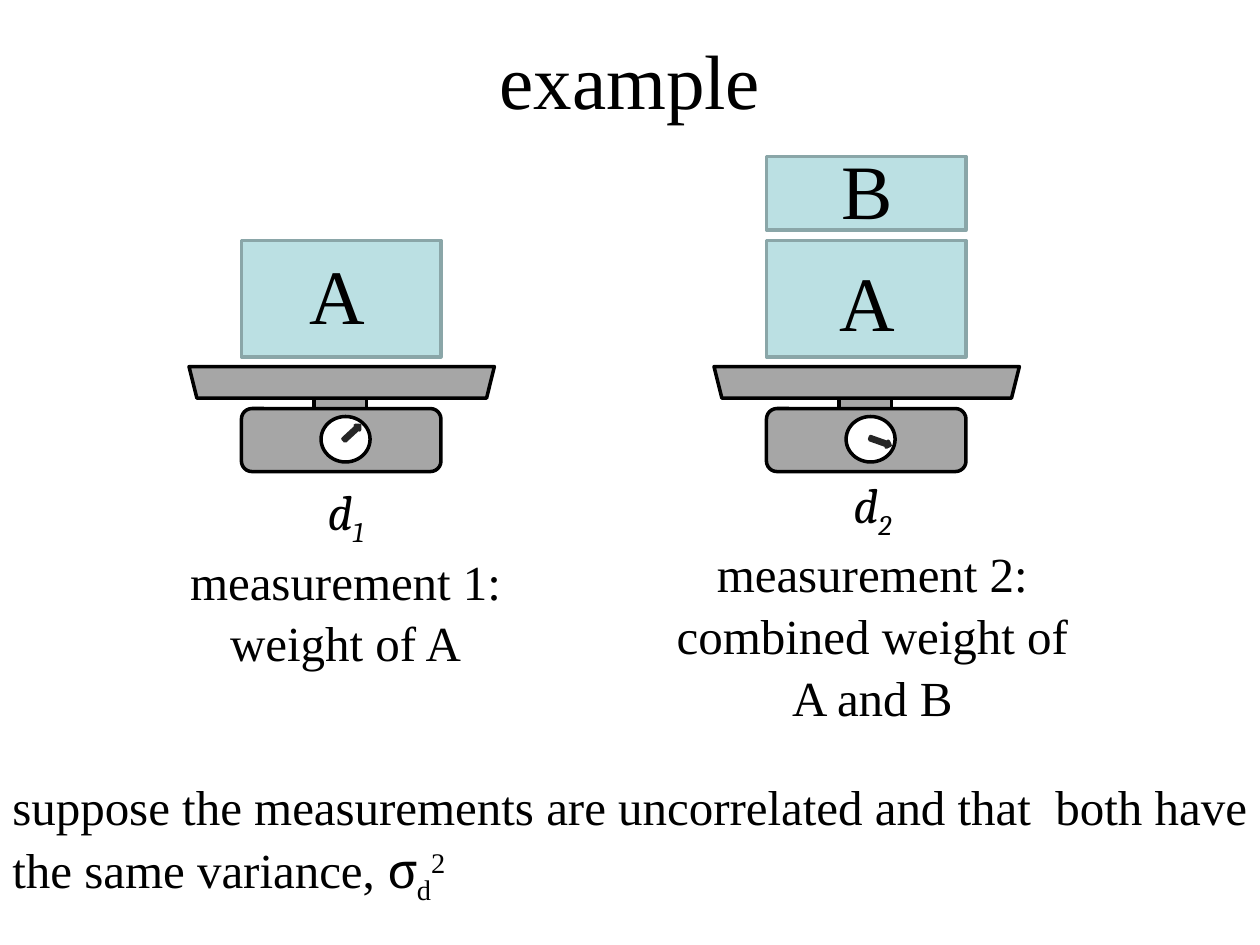
from typing import NamedTuple

from pptx import Presentation
from pptx.dml.color import RGBColor
from pptx.enum.shapes import MSO_SHAPE
from pptx.enum.text import MSO_ANCHOR, PP_ALIGN
from pptx.util import Pt

RECTANGLE = MSO_SHAPE.RECTANGLE
ROUNDED = MSO_SHAPE.ROUNDED_RECTANGLE
TRAPEZOID = MSO_SHAPE.TRAPEZOID
OVAL = MSO_SHAPE.OVAL
ARROW = MSO_SHAPE.RIGHT_ARROW
CENTER, LEFT = PP_ALIGN.CENTER, PP_ALIGN.LEFT
MIDDLE, TOP = MSO_ANCHOR.MIDDLE, MSO_ANCHOR.TOP

SERIF, MATH = "Times New Roman", "Cambria"
BLACK, WHITE, GRAY = "000000", "FFFFFF", "A6A6A6"
BLUE, BLUE_EDGE, NEEDLE = "BBE0E3", "8AA6A8", "262626"
LINE_SPACING = 1.05


class Area(NamedTuple):
    left: float
    top: float
    width: float
    height: float

    def shifted(self, distance: float) -> "Area":
        return self._replace(left=self.left + distance)

    def lengths(self) -> list:
        return [Pt(value) for value in self]


class Piece(NamedTuple):
    kind: int
    area: Area
    fill: str = GRAY
    line: str = BLACK
    rotation: float = 0


class Span(NamedTuple):
    text: str
    font: str = SERIF
    size: float = 28
    italic: bool = False
    baseline: int = 0


class Scale(NamedTuple):
    left: float
    pieces: list[Piece]


class Label(NamedTuple):
    area: Area
    paragraphs: list[list[Span]]
    align: int = CENTER
    anchor: int = MIDDLE
    spacing: float = LINE_SPACING


def color(value: str) -> RGBColor:
    return RGBColor.from_string(value)


def add_spans(para, spans: list[Span]) -> None:
    for span in spans:
        run = para.add_run()
        run.text = span.text
        run.font.name = span.font
        run.font.size = Pt(span.size)
        run.font.italic = span.italic
        run.font.color.rgb = color(BLACK)
        if span.baseline:
            run._r.get_or_add_rPr().set("baseline", str(span.baseline * 1000))


def draw_scale(page, scale: Scale) -> None:
    """Draw the pieces as one group; their positions count from the scale's left."""
    group = page.shapes.add_group_shape()
    for piece in scale.pieces:
        area = piece.area.shifted(scale.left)
        shape = group.shapes.add_shape(piece.kind, *area.lengths())
        shape.shadow.inherit = False
        shape.rotation = piece.rotation
        shape.fill.solid()
        shape.fill.fore_color.rgb = color(piece.fill)
        shape.line.color.rgb = color(piece.line)
        shape.line.width = Pt(2)


def draw_label(page, label: Label) -> None:
    box = page.shapes.add_textbox(*label.area.lengths())
    frame = box.text_frame
    frame.word_wrap = True
    frame.vertical_anchor = label.anchor
    for index, spans in enumerate(label.paragraphs):
        para = frame.add_paragraph() if index else frame.paragraphs[0]
        para.alignment = label.align
        para.line_spacing = label.spacing
        add_spans(para, spans)


def draw_title(page, text: str) -> None:
    title = page.shapes.title
    title.left, title.top, title.width, title.height = Area(0, 0, 720, 90).lengths()
    title.text_frame.vertical_anchor = MIDDLE
    para = title.text_frame.paragraphs[0]
    para.alignment = CENTER
    add_spans(para, [Span(text, size=44)])


def block(top: float, height: float) -> Piece:
    return Piece(RECTANGLE, Area(30, top, 114, height), BLUE, BLUE_EDGE)


def needle(left: float, top: float, rotation: float) -> Piece:
    return Piece(ARROW, Area(left, top, 12.2, 3.6), GRAY, NEEDLE, rotation)


def block_letter(letter: str, left: float, top: float) -> Label:
    return Label(Area(left, top, 60, 60.5), [[Span(letter, size=44)]], LEFT, TOP, 1)


def caption(area: Area, number: str, text: str) -> Label:
    symbol = [Span("d", MATH, italic=True),
              Span(number, MATH, italic=True, baseline=-25)]
    return Label(area, [symbol, [Span(text)]])


BALANCE = [
    Piece(RECTANGLE, Area(71.5, 221.5, 30, 18)),
    block(137.5, 66.5),
    Piece(ROUNDED, Area(30, 233.5, 114, 36)),
    Piece(TRAPEZOID, Area(0, 209.5, 174.5, 18), rotation=180),
    Piece(OVAL, Area(75.5, 238, 28, 26), WHITE),
]
SCALES = [
    Scale(108, [*BALANCE, needle(87, 245.5, 317.3)]),
    Scale(408, [block(89.5, 42), *BALANCE, needle(88.8, 250.6, 19.5)]),
]
LABELS = [
    caption(Area(68.5, 268.5, 258, 120), "1", "measurement 1: weight of A"),
    block_letter("A", 170, 138),
    block_letter("A", 472.5, 142),
    block_letter("B", 474, 78),
    caption(Area(369.5, 252, 258, 180), "2",
            "measurement 2: combined weight of A and B"),
    Label(Area(0, 420, 720, 120), [[
        Span("suppose the measurements are uncorrelated and that  both "
             "have the same variance, "),
        Span("σ", MATH),
        Span("d", baseline=-25),
        Span("2", baseline=30),
    ]], LEFT),
]


def main() -> None:
    deck = Presentation()
    deck.slide_width, deck.slide_height = Pt(720), Pt(540)
    page = deck.slides.add_slide(deck.slide_layouts[5])
    draw_title(page, "example")
    for scale in SCALES:
        draw_scale(page, scale)
    for label in LABELS:
        draw_label(page, label)
    deck.save("out.pptx")


if __name__ == "__main__":
    main()
